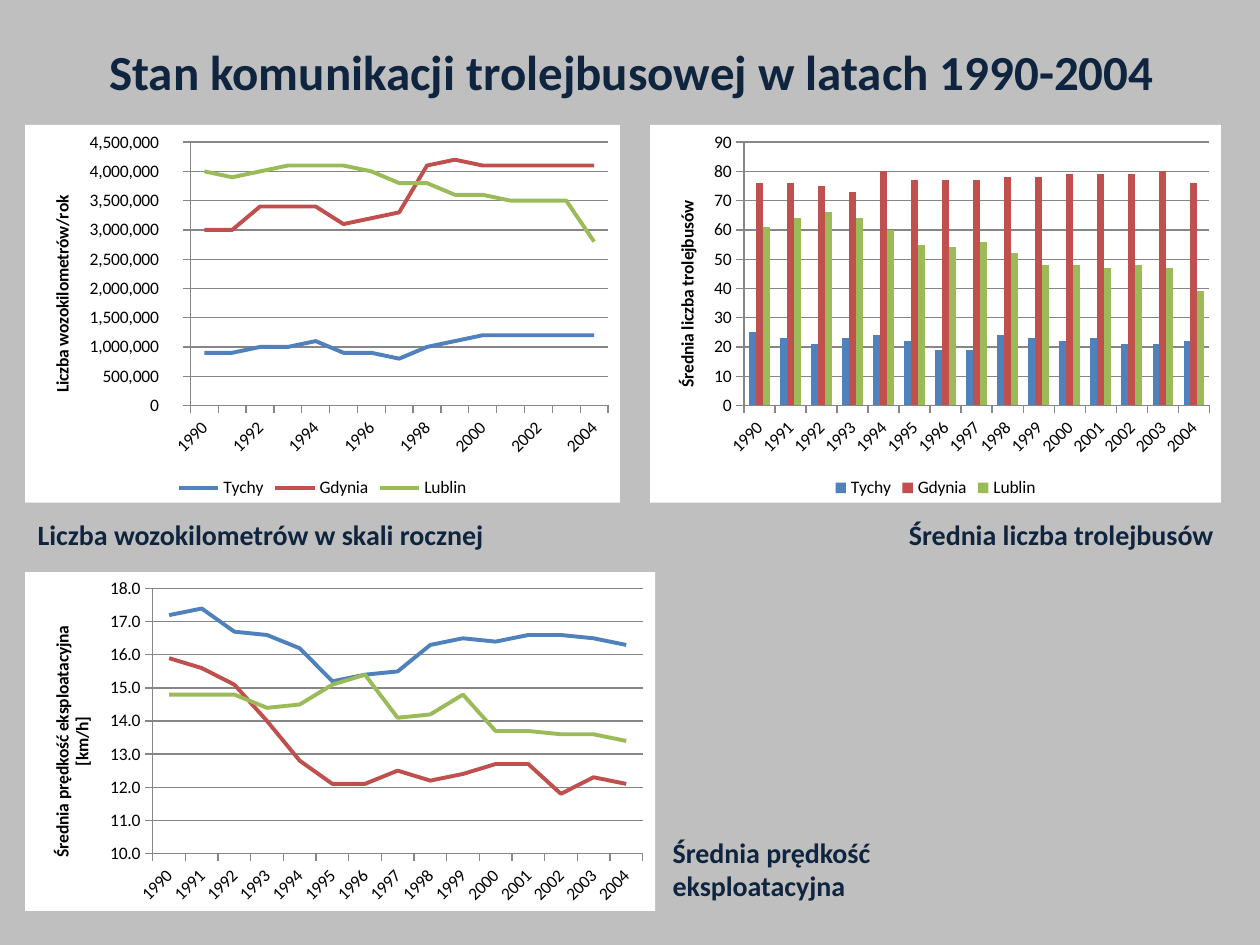
from pptx import Presentation
from pptx.chart.data import CategoryChartData
from pptx.dml.color import RGBColor
from pptx.enum.chart import XL_CHART_TYPE, XL_LEGEND_POSITION, XL_TICK_MARK
from pptx.enum.text import MSO_ANCHOR, MSO_AUTO_SIZE, PP_ALIGN
from pptx.oxml import parse_xml
from pptx.oxml.ns import nsdecls
from pptx.util import Inches, Pt

LINE, COLUMN = XL_CHART_TYPE.LINE, XL_CHART_TYPE.COLUMN_CLUSTERED
BOTTOM, OUTSIDE = XL_LEGEND_POSITION.BOTTOM, XL_TICK_MARK.OUTSIDE
LEFT, CENTER, RIGHT = PP_ALIGN.LEFT, PP_ALIGN.CENTER, PP_ALIGN.RIGHT
MIDDLE, GROW = MSO_ANCHOR.MIDDLE, MSO_AUTO_SIZE.SHAPE_TO_FIT_TEXT

COLORS = {"back": "BFBFBF", "navy": "0F243E", "black": "000000", "white": "FFFFFF",
          "grid": "868686", "blue": "4F81BD", "red": "C0504D", "green": "9BBB59"}
SERIES_COLORS = ("blue", "red", "green")
CITIES = ("Tychy", "Gdynia", "Lublin")
YEARS = [str(year) for year in range(1990, 2005)]

DISTANCE = [[thousands * 1000 for thousands in row] for row in (
    (900, 900, 1000, 1000, 1100, 900, 900, 800, 1000, 1100, 1200, 1200, 1200, 1200, 1200),
    (3000, 3000, 3400, 3400, 3400, 3100, 3200, 3300, 4100, 4200, 4100, 4100, 4100, 4100, 4100),
    (4000, 3900, 4000, 4100, 4100, 4100, 4000, 3800, 3800, 3600, 3600, 3500, 3500, 3500, 2800))]
FLEET = [
    (25, 23, 21, 23, 24, 22, 19, 19, 24, 23, 22, 23, 21, 21, 22),
    (76, 76, 75, 73, 80, 77, 77, 77, 78, 78, 79, 79, 79, 80, 76),
    (61, 64, 66, 64, 60, 55, 54, 56, 52, 48, 48, 47, 48, 47, 39)]
SPEED = [
    (17.2, 17.4, 16.7, 16.6, 16.2, 15.2, 15.4, 15.5, 16.3, 16.5, 16.4, 16.6, 16.6, 16.5, 16.3),
    (15.9, 15.6, 15.1, 14, 12.8, 12.1, 12.1, 12.5, 12.2, 12.4, 12.7, 12.7, 11.8, 12.3, 12.1),
    (14.8, 14.8, 14.8, 14.4, 14.5, 15.1, 15.4, 14.1, 14.2, 14.8, 13.7, 13.7, 13.6, 13.6, 13.4)]


def rgb(name):
    """Return the named palette colour."""
    return RGBColor.from_string(COLORS[name])


class SlideBuilder:
    """Holds the text style and the slide being built."""

    def __init__(self, s, font="Calibri"):
        """Keep the slide and paint its background."""
        self.s, self.font = s, font
        s.background.fill.solid()
        s.background.fill.fore_color.rgb = rgb("back")

    def style(self, font, size, color, bold=False):
        """Apply the house font with the given format values."""
        for name, value in {"name": self.font, "size": Pt(size), "bold": bold}.items():
            setattr(font, name, value)
        font.color.rgb = rgb(color)

    def add_lines(self, tf, lines, size, align):
        """Add bold navy lines, one paragraph each."""
        tf.word_wrap = True
        for i, line in enumerate(lines):
            p = tf.paragraphs[0] if i == 0 else tf.add_paragraph()
            p.alignment = align
            r = p.add_run()
            r.text = line
            self.style(r.font, size, "navy", True)

    def title(self, text, box):
        """Fill and place the title placeholder."""
        sp = self.s.shapes.title
        for name, value in zip(("left", "top", "width", "height"), box):
            setattr(sp, name, Inches(value))
        sp.text_frame.vertical_anchor = MIDDLE
        self.add_lines(sp.text_frame, [text], 28, CENTER)

    def caption(self, lines, box, align=LEFT):
        """Add a chart caption."""
        sp = self.s.shapes.add_textbox(*map(Inches, box))
        self.add_lines(sp.text_frame, lines, 16, align)
        sp.text_frame.auto_size = GROW

    def chart(self, kind, rows, box, axis_title, number_format="General",
              names=CITIES, legend=True, minimum=None):
        """Add a yearly chart with one series per city."""
        data = CategoryChartData()
        data.categories = YEARS
        for name, row in zip(names, rows):
            data.add_series(name, row)
        chart = self.s.shapes.add_chart(kind, *map(Inches, box), data).chart
        self.style(chart.font, 10, "black")
        chart.has_title = False
        chart.has_legend = legend
        if legend:
            chart.legend.position = BOTTOM
            chart.legend.include_in_layout = False
        self.chart_area(chart)
        self.axes(chart, axis_title, number_format, minimum)
        self.series(chart, kind)

    def chart_area(self, chart):
        """Give the chart a white area without an outline."""
        chart._chartSpace.chart.addnext(parse_xml(
            f'<c:spPr {nsdecls("c", "a")}><a:solidFill><a:srgbClr val="{COLORS["white"]}"/>'
            '</a:solidFill><a:ln><a:noFill/></a:ln></c:spPr>'))

    def axes(self, chart, axis_title, number_format, minimum):
        """Format both axes and the gridlines."""
        years, values = chart.category_axis, chart.value_axis
        for axis in (years, values):
            axis.major_tick_mark = OUTSIDE
            axis.format.line.color.rgb = rgb("grid")
            self.style(axis.tick_labels.font, 10, "black")
        years._element.txPr.bodyPr.set("rot", "-2700000")
        values.major_gridlines.format.line.color.rgb = rgb("grid")
        values.tick_labels.number_format = number_format
        values.tick_labels.number_format_is_linked = False
        if minimum is not None:
            values.minimum_scale = minimum
        tf = values.axis_title.text_frame
        tf.text = axis_title
        self.style(tf.paragraphs[0].runs[0].font, 10, "black", True)

    def series(self, chart, kind):
        """Colour the lines or columns."""
        plot = chart.plots[0]
        plot.vary_by_categories = False
        for series, color in zip(plot.series, SERIES_COLORS):
            if kind == LINE:
                series.smooth = False
                series.format.line.width = Pt(2.25)
                series.format.line.color.rgb = rgb(color)
            else:
                series.format.fill.solid()
                series.format.fill.fore_color.rgb = rgb(color)


def main():
    """Build and save the slide."""
    prs = Presentation()
    prs.slide_width, prs.slide_height = Inches(10), Inches(7.5)
    slide = SlideBuilder(prs.slides.add_slide(prs.slide_layouts[5]))
    slide.title("Stan komunikacji trolejbusowej w latach 1990-2004", (0.51, 0.21, 9, 0.71))
    slide.chart(LINE, DISTANCE, (0.2, 0.99, 4.72, 3), "Liczba wozokilometrów/rok",
                "#,##0\\ _z_ł")
    slide.caption(["Liczba wozokilometrów w skali rocznej"], (0.2, 4.06, 3.94, 0.37))
    slide.chart(COLUMN, FLEET, (5.16, 0.99, 4.53, 3), "Średnia liczba trolejbusów")
    slide.caption(["Średnia liczba trolejbusów"], (5.79, 4.06, 3.94, 0.37), RIGHT)
    slide.chart(LINE, SPEED, (0.2, 4.54, 5, 2.69), "Średnia prędkość eksploatacyjna [km/h]",
                "0.0", names=("Series 1", "Series 2", "Series 3"), legend=False, minimum=10)
    slide.caption(["Średnia prędkość", "eksploatacyjna"], (5.24, 6.58, 3.94, 0.64))
    prs.save("out.pptx")


if __name__ == "__main__":
    main()
